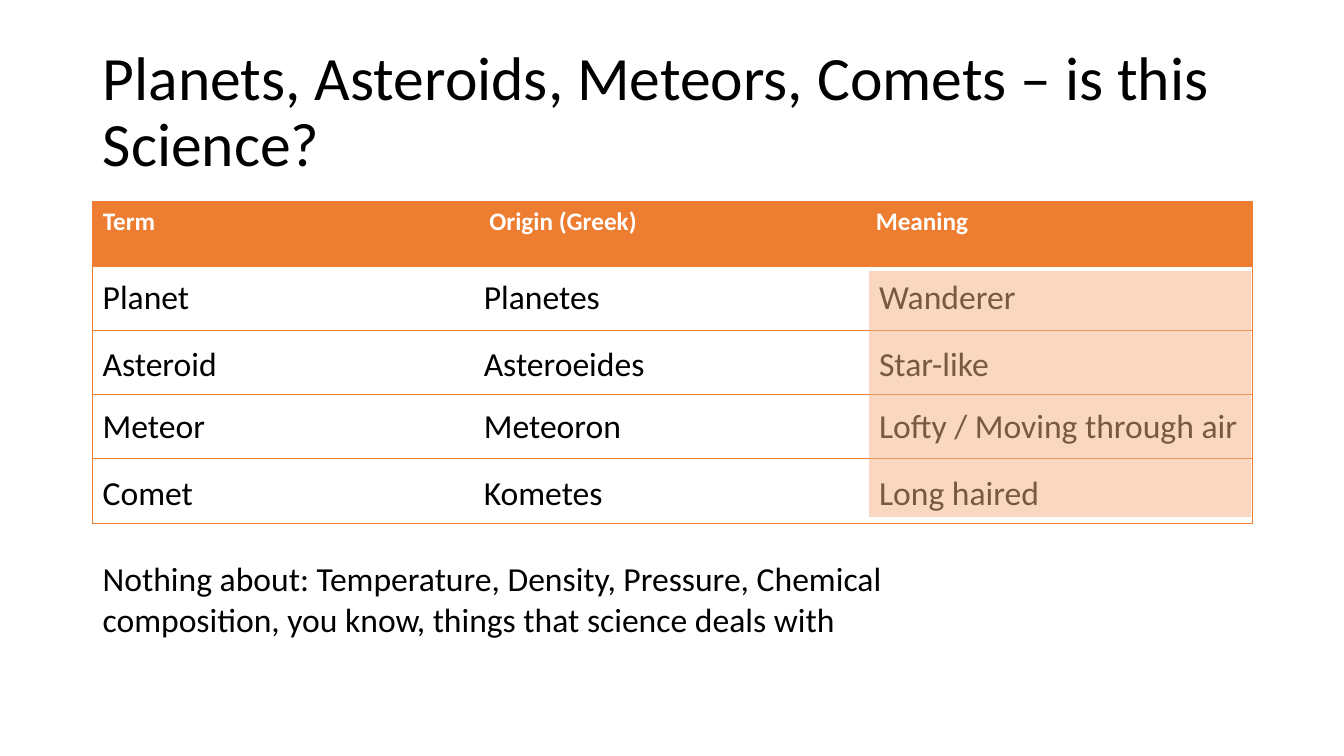
"""Build a slide on the Greek origins of names for bodies in the sky."""
from lxml import etree
from pptx import Presentation
from pptx import util as u
from pptx.dml.color import RGBColor
from pptx.enum import shapes, text
from pptx.oxml.ns import qn

BLACK = RGBColor(0x00, 0x00, 0x00)
WHITE = RGBColor(0xFF, 0xFF, 0xFF)
ORANGE = RGBColor(0xED, 0x7D, 0x31)
PEACH = RGBColor(0xF4, 0xB1, 0x83)

LEFT, WIDTH = 0.92, 11.5
HEADS = ["Term", "Origin (Greek)", "Meaning"]
COLS = [LEFT, 4.7, 8.62]
ROWS = [
    (2.69, [("Planet", 1.07), ("Planetes", 1.37), ("Wanderer", 1.57)]),
    (3.35, [("Asteroid", 1.34), ("Asteroeides", 1.81), ("Star-like", 1.31)]),
    (3.97, [("Meteor", 1.23), ("Meteoron", 1.58),
            ("Lofty / Moving through air", 3.79)]),
    (4.63, [("Comet", 1.1), ("Kometes", 1.39), ("Long haired", 1.81)]),
]


def write(frame, words, size=24, color=BLACK, bold=False, font="Calibri", space=None):
    para = frame.paragraphs[0]
    para.alignment = text.PP_ALIGN.LEFT
    para.line_spacing = space
    run = para.add_run()
    run.text = words
    run.font.name = font
    run.font.size = u.Pt(size)
    run.font.bold = bold
    run.font.color.rgb = color


def edge(cell, side, color=None):
    line = etree.SubElement(cell._tc.get_or_add_tcPr(), qn("a:ln" + side))
    if color is None:
        line.set("w", "0")
        etree.SubElement(line, qn("a:noFill"))
    else:
        line.set("w", str(u.Pt(0.5)))
        fill = etree.SubElement(line, qn("a:solidFill"))
        etree.SubElement(fill, qn("a:srgbClr"), val=str(color))


class Page:
    def __init__(self, deck):
        self.slide = deck.slides.add_slide(deck.slide_layouts[5])
        self.items = self.slide.shapes

    def title(self, words, *area):
        head = self.items.title
        head.left, head.top, head.width, head.height = map(u.Inches, area)
        frame = head.text_frame
        frame.word_wrap = True
        frame.auto_size = text.MSO_AUTO_SIZE.NONE
        frame.vertical_anchor = text.MSO_ANCHOR.MIDDLE
        write(frame, words, size=44, space=0.9)

    def label(self, words, *area, wrap=False):
        frame = self.items.add_textbox(*map(u.Inches, area)).text_frame
        frame.word_wrap = wrap
        frame.auto_size = text.MSO_AUTO_SIZE.SHAPE_TO_FIT_TEXT
        write(frame, words)

    def table(self, heads, count, *area):
        grid = self.items.add_table(count, len(heads), *map(u.Inches, area)).table
        grid.horz_banding = False
        last = len(heads) - 1
        for row in range(count):
            for col, head in enumerate(heads):
                cell = grid.cell(row, col)
                edge(cell, "L", ORANGE if col == 0 else None)
                edge(cell, "R", ORANGE if col == last else None)
                edge(cell, "T", ORANGE)
                edge(cell, "B", ORANGE)
                if row == 0:
                    cell.fill.solid()
                    cell.fill.fore_color.rgb = ORANGE
                    write(cell.text_frame, head, size=18, color=WHITE, bold=True)
                else:
                    cell.fill.background()

    def veil(self, color, alpha, *area):
        box = self.items.add_shape(shapes.MSO_SHAPE.RECTANGLE, *map(u.Inches, area))
        box.shadow.inherit = False
        box.line.fill.background()
        box.fill.solid()
        box.fill.fore_color.rgb = color
        tint = box._element.spPr.find(qn("a:solidFill"))[0]
        etree.SubElement(tint, qn("a:alpha"), val=str(alpha * 1000))


def main():
    deck = Presentation()
    deck.slide_width, deck.slide_height = u.Inches(13.33), u.Inches(7.5)
    page = Page(deck)
    page.title("Planets, Asteroids, Meteors, Comets – is this Science?",
               LEFT, 0.4, WIDTH, 1.45)
    page.table(HEADS, len(ROWS) + 1, LEFT, 2, WIDTH, 3.19)
    for top, terms in ROWS:
        for left, (word, width) in zip(COLS, terms):
            page.label(word, left, top, width, 0.5)
    page.label("Nothing about: Temperature, Density, Pressure, Chemical composition, "
               "you know, things that science deals with",
               LEFT, 5.49, 9.51, 0.91, wrap=True)
    page.veil(PEACH, 50, COLS[-1], ROWS[0][0], 3.79, 2.44)
    deck.save("out.pptx")


if __name__ == "__main__":
    main()
